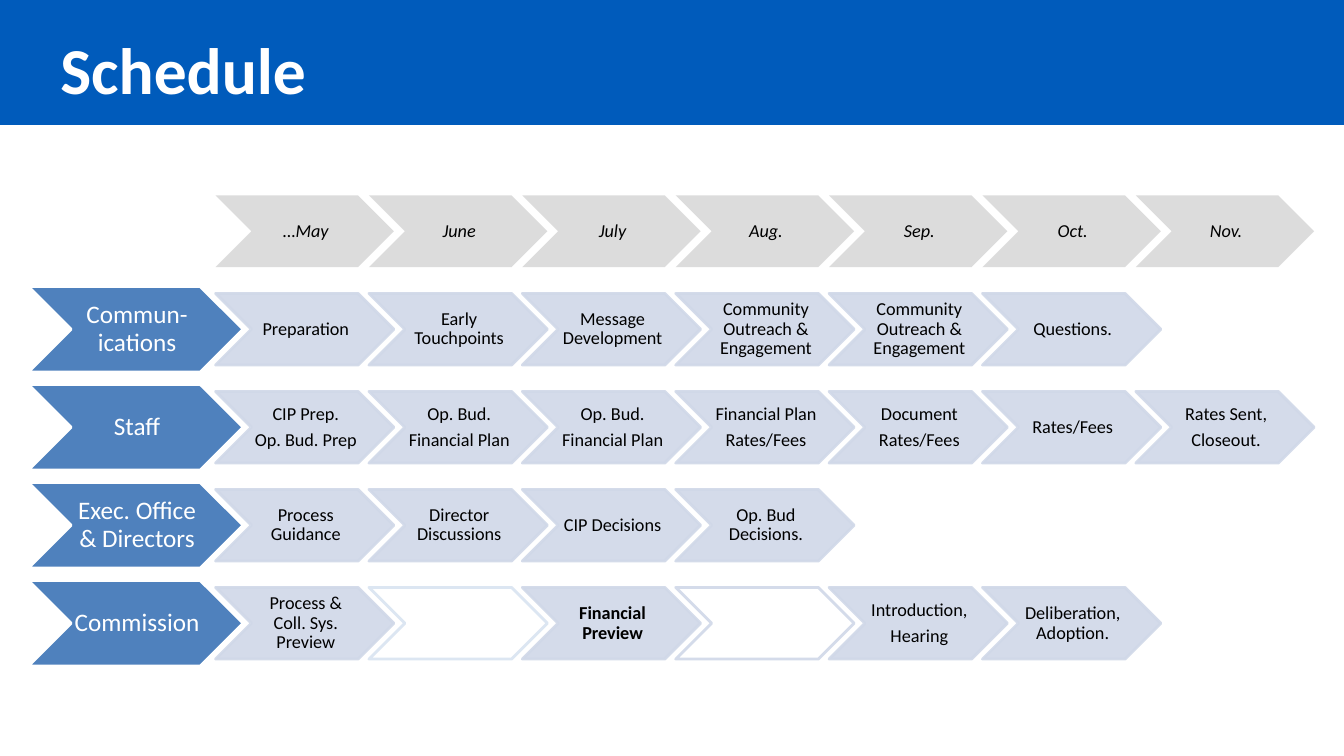
from pptx import Presentation
from pptx.dml.color import RGBColor
from pptx.enum.shapes import MSO_SHAPE
from pptx.enum.text import MSO_ANCHOR, PP_ALIGN
from pptx.oxml.xmlchemy import OxmlElement
from pptx.util import Pt

CHEVRON = MSO_SHAPE.CHEVRON
RECTANGLE = MSO_SHAPE.RECTANGLE
MIDDLE = MSO_ANCHOR.MIDDLE
CENTER = PP_ALIGN.CENTER

FONT = "Calibri"
WHITE, BLACK = "FFFFFF", "000000"
BANNER_BLUE, LABEL_BLUE = "005BBB", "4F81BD"
MONTH_GREY, STEP_BLUE, PALE_BLUE = "D9D9D9", "D0D8E8", "DCE6F2"

LABEL_LEFT, LABEL_WIDTH, LABEL_HEIGHT = 20.2, 153.4, 61.2
STEP_LEFT, STEP_WIDTH, STEP_HEIGHT = 154, 127.4, 51.2
STEP_PITCH, ROW_TOP, ROW_PITCH = 109.56, 134.6, 70
STEP_DROP = (LABEL_HEIGHT - STEP_HEIGHT) / 2

# "\n" starts a paragraph, "\v" breaks a line inside one
MONTHS = ["…May", "June", "July", "Aug.", "Sep.", "Oct.", "Nov."]
TRACKS = [
    ("Commun-\vications", [
        "Preparation", "Early Touchpoints", "Message Development",
        "Community Outreach & Engagement", "Community Outreach & Engagement",
        "Questions."]),
    ("Staff", [
        "CIP Prep.\nOp. Bud. Prep", "Op. Bud.\nFinancial Plan",
        "Op. Bud.\nFinancial Plan", "Financial Plan\nRates/Fees",
        "Document\nRates/Fees", "Rates/Fees", "Rates Sent,\nCloseout."]),
    ("Exec. Office & Directors", [
        "Process Guidance", "Director Discussions", "CIP Decisions",
        "Op. Bud Decisions."]),
    ("Commission", [
        "Process & Coll. Sys. Preview", "", "Financial Preview", "",
        "Introduction,\nHearing", "Deliberation, Adoption."]),
]
BOLD_STEP = "Financial Preview"
# Steps without text: month -> (fill, line)
OPEN_STEPS = {"June": (WHITE, PALE_BLUE), "Aug.": (None, STEP_BLUE)}


def paint(target, color, opacity=100):
    """Give a fill a solid colour with an opacity in percent."""
    target.solid()
    target.fore_color.rgb = RGBColor.from_string(color)
    if opacity < 100:
        alpha = OxmlElement("a:alpha")
        alpha.set("val", str(opacity * 1000))
        target._xPr.find(".//{*}srgbClr").append(alpha)


def add_chevron(box, text, size, color, fill, line, opacity=100,
                bold=False, italic=False):
    chevron = slide.shapes.add_shape(CHEVRON, *[Pt(length) for length in box])
    chevron.shadow.inherit = False
    if fill:
        paint(chevron.fill, fill, opacity)
    else:
        chevron.fill.background()
    if line:
        chevron.line.width = Pt(2)
        paint(chevron.line.fill, line, opacity)
    else:
        chevron.line.fill.background()
    if not text:
        return
    frame = chevron.text_frame
    frame.word_wrap = True
    frame.vertical_anchor = MIDDLE
    frame.margin_left, frame.margin_right = Pt(size / 9), 0
    frame.margin_top = frame.margin_bottom = Pt(0.7)
    for i, content in enumerate(text.split("\n")):
        paragraph = frame.add_paragraph() if i else frame.paragraphs[0]
        paragraph.alignment = CENTER
        paragraph.line_spacing = 0.9
        paragraph.space_after = Pt(size * 0.35)
        for j, part in enumerate(content.split("\v")):
            if j:
                paragraph.add_line_break()
            run = paragraph.add_run()
            run.text = part
            run.font.name, run.font.size = FONT, Pt(size)
            run.font.bold, run.font.italic = bold, italic
            paint(run.font.fill, color)


prs = Presentation()
prs.slide_width, prs.slide_height = Pt(960), Pt(540)
slide = prs.slides.add_slide(prs.slide_layouts[6])

# Months
for column, month in enumerate(MONTHS):
    box = (STEP_LEFT + column * STEP_PITCH, ROW_TOP + STEP_DROP,
           STEP_WIDTH, STEP_HEIGHT)
    add_chevron(box, month, 13, BLACK, MONTH_GREY, None, 90, italic=True)

# Tracks
for row, (track, steps) in enumerate(TRACKS, start=1):
    top = ROW_TOP + row * ROW_PITCH
    add_chevron((LABEL_LEFT, top, LABEL_WIDTH, LABEL_HEIGHT),
                track, 18, WHITE, LABEL_BLUE, WHITE)
    for column, step in enumerate(steps):
        fill, line = (STEP_BLUE, STEP_BLUE) if step else OPEN_STEPS[MONTHS[column]]
        box = (STEP_LEFT + column * STEP_PITCH, top + STEP_DROP,
               STEP_WIDTH, STEP_HEIGHT)
        add_chevron(box, step, 13, BLACK, fill, line, 90 if line == STEP_BLUE else 100,
                    bold=step == BOLD_STEP)

# Title banner
banner = slide.shapes.add_shape(RECTANGLE, 0, Pt(-0.7), Pt(960), Pt(90))
banner.shadow.inherit = False
paint(banner.fill, BANNER_BLUE)
banner.line.fill.background()

title = slide.shapes.add_textbox(Pt(36), Pt(17.3), Pt(912), Pt(72))
title.text_frame.word_wrap = True
heading = title.text_frame.paragraphs[0].add_run()
heading.text = "Schedule"
heading.font.name, heading.font.size, heading.font.bold = FONT, Pt(46.8), True
paint(heading.font.fill, WHITE)

prs.save("out.pptx")
